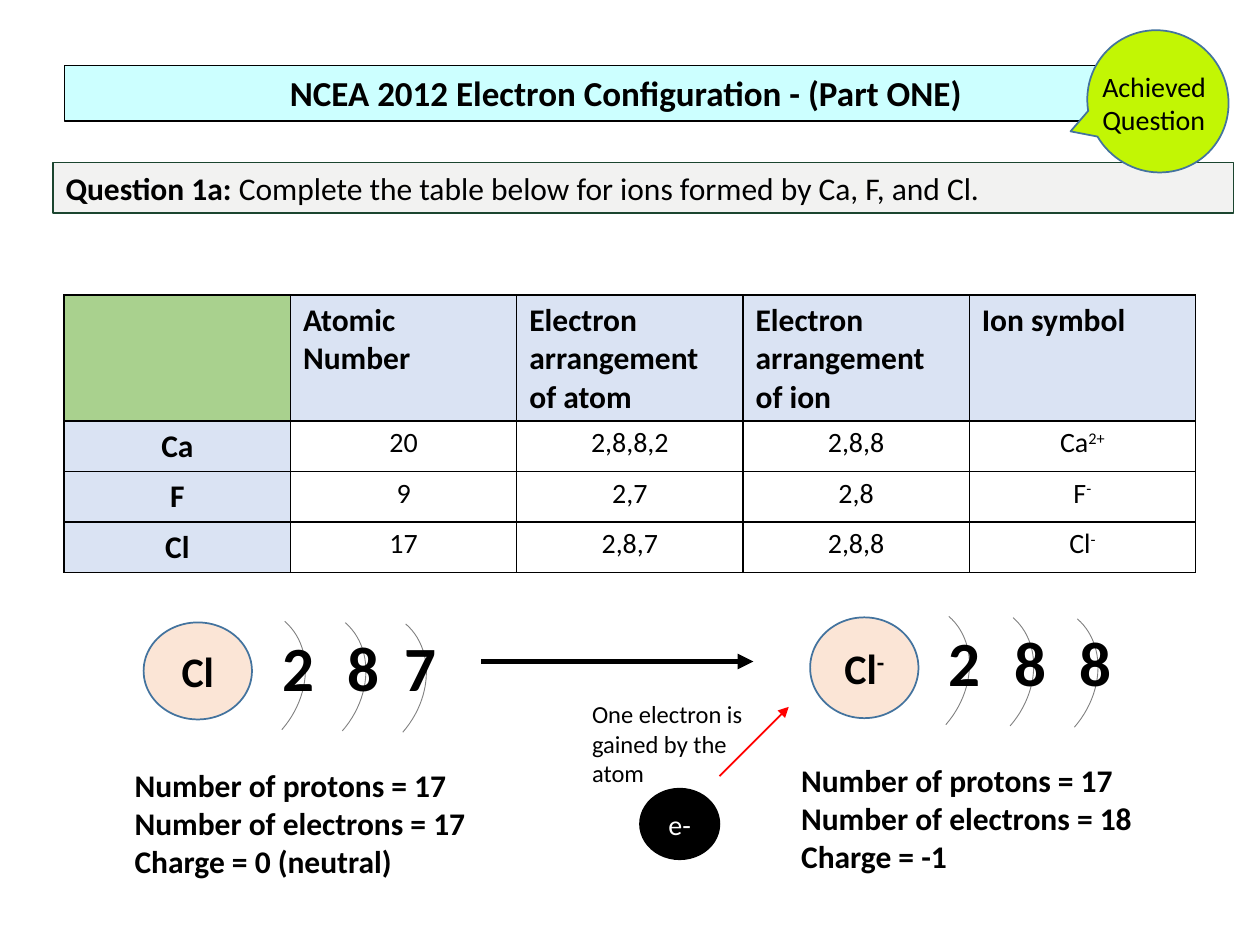
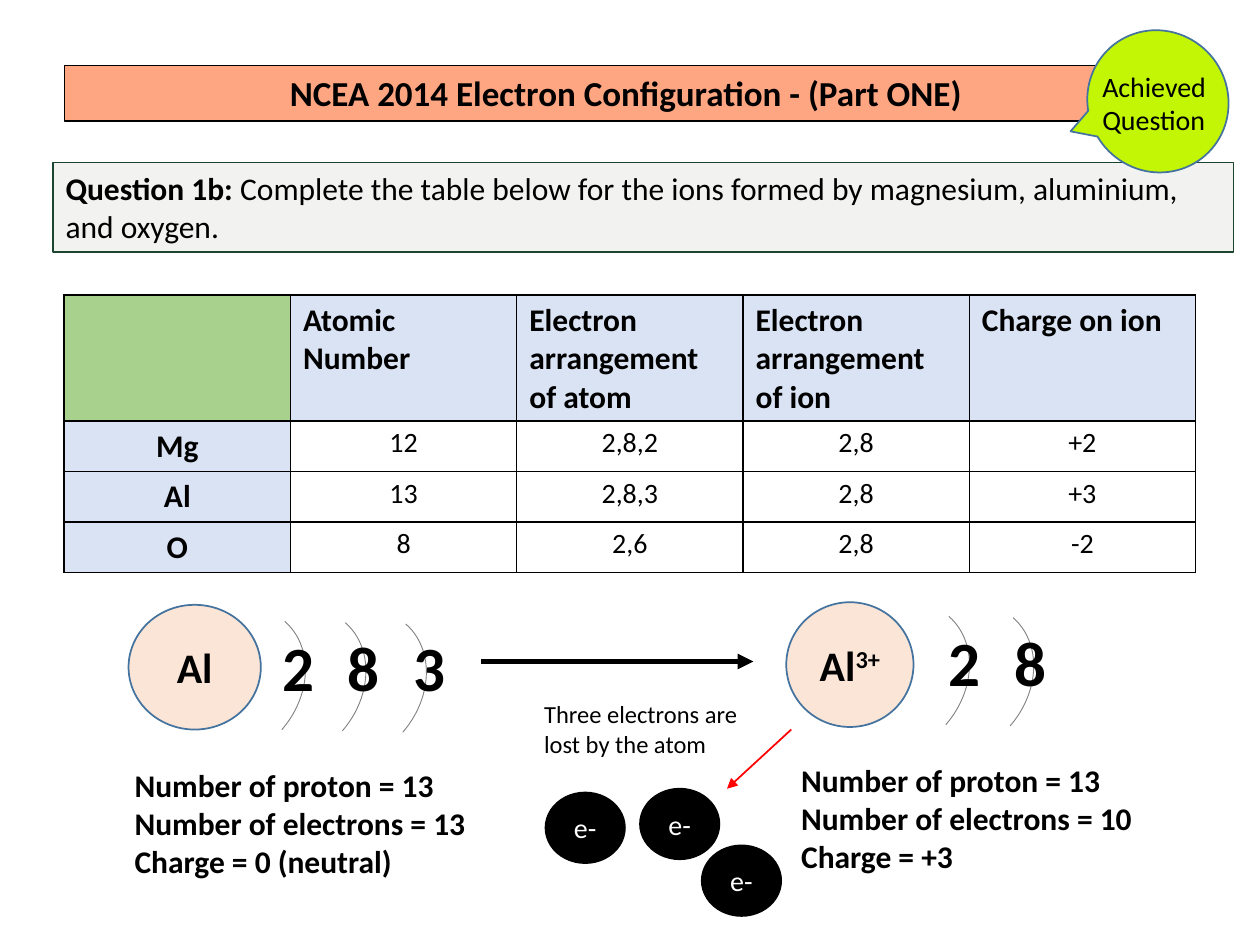
from dataclasses import dataclass

from lxml.etree import SubElement
from pptx import Presentation
from pptx.dml.color import RGBColor
from pptx.enum.shapes import MSO_CONNECTOR, MSO_SHAPE
from pptx.enum.text import MSO_ANCHOR, MSO_AUTO_SIZE, PP_ALIGN
from pptx.oxml.ns import qn
from pptx.util import Inches, Pt


@dataclass(frozen=True)
class Theme:
    # Colours
    ink: str = "000000"
    paper: str = "FFFFFF"
    question_fill: str = "EFEFEE"
    question_line: str = "1B452F"
    badge: str = "C2F604"
    outline: str = "43739E"
    corner: str = "A9D18E"
    header: str = "DAE3F3"
    nucleus: str = "FBE5D6"
    shell: str = "808080"
    accent: str = "FF0000"
    # Type
    font: str = "Calibri"
    title: int = 20
    body: int = 18
    small: int = 16
    caption: int = 14
    symbol: int = 24
    digit: int = 36


def colour(code):
    return RGBColor.from_string(code)


def inches(*lengths):
    return [Inches(length) for length in lengths]


class Page:
    """The current slide, drawn in the shared style."""

    def __init__(self, deck, theme):
        self.theme = theme
        self.slide = deck.slides.add_slide(deck.slide_layouts[1])
        self.shapes = self.slide.shapes

    def fill_text(self, frame, lines, size, bold=False, ink=None, align=PP_ALIGN.LEFT):
        """Fill a text frame; text after ^ is raised."""
        frame.word_wrap = True
        for index, line in enumerate(lines):
            para = frame.paragraphs[0] if index == 0 else frame.add_paragraph()
            para.alignment = align
            para.space_before = Pt(0)
            font = para.font
            font.name, font.size, font.bold = self.theme.font, Pt(size), bold
            font.color.rgb = colour(ink or self.theme.ink)
            base, _, raised = line.partition("^")
            para.add_run().text = base
            if raised:
                span = para.add_run()
                span.text = raised
                span._r.get_or_add_rPr().set("baseline", "30000")

    def paint(self, shape, fill, line, width):
        if fill:
            shape.fill.solid()
            shape.fill.fore_color.rgb = colour(fill)
        else:
            shape.fill.background()
        shape.line.color.rgb = colour(line)
        shape.line.width = Pt(width)

    def place(self, holder, box):
        holder.left, holder.top, holder.width, holder.height = inches(*box)
        holder.text_frame.auto_size = MSO_AUTO_SIZE.NONE
        holder.text_frame.vertical_anchor = MSO_ANCHOR.TOP

    def title(self, text, fill):
        holder = self.shapes.title
        self.place(holder, (0.51, 0.52, 8.98, 0.44))
        self.paint(holder, fill, self.theme.ink, 0.75)
        self.fill_text(holder.text_frame, [text], self.theme.title, True, align=PP_ALIGN.CENTER)

    def question(self, label, text, height):
        holder = self.slide.placeholders[1]
        self.place(holder, (0.42, 1.29, 9.37, height))
        self.paint(holder, self.theme.question_fill, self.theme.question_line, 0.75)
        tint = holder._element.spPr.find(qn("a:solidFill"))[0]
        SubElement(tint, qn("a:alpha")).set("val", "79000")
        self.fill_text(holder.text_frame, [label], self.theme.body)
        para = holder.text_frame.paragraphs[0]
        para.runs[0].font.bold = True
        para.add_run().text = text
        # No bullet and no hanging indent
        props = para._p.get_or_add_pPr()
        props.set("marL", "0")
        props.set("indent", "0")
        props.find(qn("a:defRPr")).addprevious(SubElement(props, qn("a:buNone")))

    def shape(self, kind, box, fill, line, width=1, rotation=0):
        shape = self.shapes.add_shape(kind, *inches(*box))
        shape.shadow.inherit = False
        shape.rotation = rotation
        self.paint(shape, fill, line, width)
        return shape

    def text(self, lines, box, size, bold=False):
        label = self.shapes.add_textbox(*inches(*box))
        self.fill_text(label.text_frame, lines, size, bold)

    def badge(self):
        self.shape(MSO_SHAPE.OVAL_CALLOUT, (8.62, 0.25, 1.14, 1.11),
                   self.theme.badge, self.theme.outline, rotation=52.1)
        self.text(["Achieved", "Question"], (8.65, 0.5, 1.26, 0.64), self.theme.small)

    def ball(self, text, box, fill, line, size, bold, ink):
        ball = self.shape(MSO_SHAPE.OVAL, box, fill, line)
        ball.text_frame.vertical_anchor = MSO_ANCHOR.MIDDLE
        self.fill_text(ball.text_frame, [text], size, bold, ink, PP_ALIGN.CENTER)

    def nucleus(self, symbol, box):
        theme = self.theme
        self.ball(symbol, box, theme.nucleus, theme.outline, theme.symbol, True, theme.ink)

    def electron(self, left, top):
        theme = self.theme
        self.ball("e-", (left, top, 0.63, 0.56), theme.ink, theme.ink,
                  theme.small, False, theme.paper)

    def shells(self, digits, digit_lefts, digit_top, arc_left, arc_top, arc_step):
        for index, (digit, left) in enumerate(zip(digits, digit_lefts)):
            arc = (arc_left + index * arc_step, arc_top + index * 0.01, 1.09, 1.33)
            self.shape(MSO_SHAPE.ARC, arc, None, self.theme.shell, 0.5, 40.9)
            self.text([digit], (left, digit_top, 0.5, 0.71), self.theme.digit, True)

    def arrow(self, start, end, line, width):
        arrow = self.shapes.add_connector(MSO_CONNECTOR.STRAIGHT, *inches(*start, *end))
        arrow.line.color.rgb = colour(line)
        arrow.line.width = Pt(width)
        outline = arrow._element.spPr.find(qn("a:ln"))
        SubElement(outline, qn("a:tailEnd")).set("type", "triangle")
        SubElement(arrow._element.spPr, qn("a:effectLst"))

    def cell(self, cell, text, fill, size, bold, align):
        props = cell._tc.get_or_add_tcPr()
        for side in ("lnL", "lnR", "lnT", "lnB"):
            border = SubElement(props, qn(f"a:{side}"), w=str(Pt(1)))
            paint = SubElement(border, qn("a:solidFill"))
            SubElement(paint, qn("a:srgbClr"), val=self.theme.ink)
        if fill:
            cell.fill.solid()
            cell.fill.fore_color.rgb = colour(fill)
        else:
            cell.fill.background()
        if text:
            self.fill_text(cell.text_frame, [text], size, bold, align=align)

    def table(self, rows):
        theme = self.theme
        box = inches(0.51, 2.34, 8.98, 2.2)
        table = self.shapes.add_table(len(rows), len(rows[0]), *box).table
        table.first_row = table.horz_banding = False
        for r, row in enumerate(rows):
            table.rows[r].height = Inches(0.4 if r else 1)
            for c, text in enumerate(row):
                cell = table.cell(r, c)
                align = PP_ALIGN.CENTER if r else PP_ALIGN.LEFT
                if r and c:
                    cell.margin_left = cell.margin_right = Inches(0.04)
                    cell.margin_top = cell.margin_bottom = Inches(0.04)
                    self.cell(cell, text, None, theme.small, False, align)
                else:
                    fill = theme.header if r or c else theme.corner
                    self.cell(cell, text, fill, theme.body, True, align)


HEADINGS = ("", "Atomic Number", "Electron arrangement of atom", "Electron arrangement of ion")

QUESTIONS = [
    dict(
        title="NCEA 2012 Electron Configuration - (Part ONE) ", band="CCFFFF",
        label="Question 1a: ", height=0.4,
        task="Complete the table below for ions formed by Ca, F, and Cl.",
        rows=[(*HEADINGS, "Ion symbol"),
              ("Ca", "20", "2,8,8,2", "2,8,8", "Ca^2+"),
              ("F", "9", "2,7", "2,8", "F^-"),
              ("Cl", "17", "2,8,7", "2,8,8", "Cl^-")],
        atom=("Cl", (1.14, 4.94, 0.86, 0.77)), atom_shells="287",
        atom_digits=(2.14, 2.66, 3.11),
        ion=("Cl^-", (6.43, 4.9, 0.86, 0.8)), ion_shells="288",
        atom_facts=["Number of protons = 17", "Number of electrons = 17", "Charge = 0 (neutral)"],
        ion_facts=["Number of protons = 17", "Number of electrons = 18", "Charge = -1"],
        change="One electron is gained by the atom", change_box=(4.6, 5.5, 1.42, 0.81),
        transfer=((5.71, 6.16), (6.26, 5.61)), electrons=[(5.08, 6.26)],
    ),
    dict(
        title="NCEA 2014 Electron Configuration - (Part ONE) ", band="FEA582",
        label="Question 1b: ", height=0.71,
        task="Complete the table below for the ions formed by magnesium, aluminium, and oxygen.",
        rows=[(*HEADINGS, "Charge on ion"),
              ("Mg", "12", "2,8,2", "2,8", "+2"),
              ("Al", "13", "2,8,3", "2,8", "+3"),
              ("O", "8", "2,6", "2,8", "-2")],
        atom=("Al", (1.02, 4.8, 1.05, 0.99)), atom_shells="283",
        atom_digits=(2.14, 2.66, 3.18),
        ion=("Al^3+", (6.24, 4.78, 1.01, 0.99)), ion_shells="28",
        atom_facts=["Number of proton = 13", "Number of electrons = 13", "Charge = 0 (neutral)"],
        ion_facts=["Number of proton = 13", "Number of electrons = 10", "Charge = +3"],
        change="Three electrons are lost by the atom", change_box=(4.22, 5.5, 1.8, 0.57),
        transfer=((6.28, 5.79), (5.77, 6.26)),
        electrons=[(5.08, 6.26), (5.57, 6.71), (4.33, 6.29)],
    ),
]


def build_page(deck, theme, item):
    page = Page(deck, theme)
    # Heading, question and answer table
    page.title(item["title"], item["band"])
    page.question(item["label"], item["task"], item["height"])
    page.badge()
    page.table(item["rows"])
    # Atom on the left, ion on the right
    page.nucleus(*item["atom"])
    page.shells(item["atom_shells"], item["atom_digits"], 4.94, 1.28, 4.77, 0.48)
    page.text(item["atom_facts"], (0.97, 6.03, 2.84, 1.01), theme.body, True)
    page.nucleus(*item["ion"])
    page.shells(item["ion_shells"], (7.43, 7.95, 8.47), 4.9, 6.55, 4.73, 0.51)
    page.text(item["ion_facts"], (6.26, 5.99, 2.84, 1.01), theme.body, True)
    # Electrons moving between them
    page.arrow((3.82, 5.25), (5.98, 5.25), theme.ink, 3)
    page.text([item["change"]], item["change_box"], theme.caption)
    page.arrow(*item["transfer"], theme.accent, 1)
    for left, top in item["electrons"]:
        page.electron(left, top)


def main():
    deck = Presentation()
    deck.slide_width, deck.slide_height = inches(10, 7.5)
    for item in QUESTIONS:
        build_page(deck, Theme(), item)
    deck.save("out.pptx")


if __name__ == "__main__":
    main()
